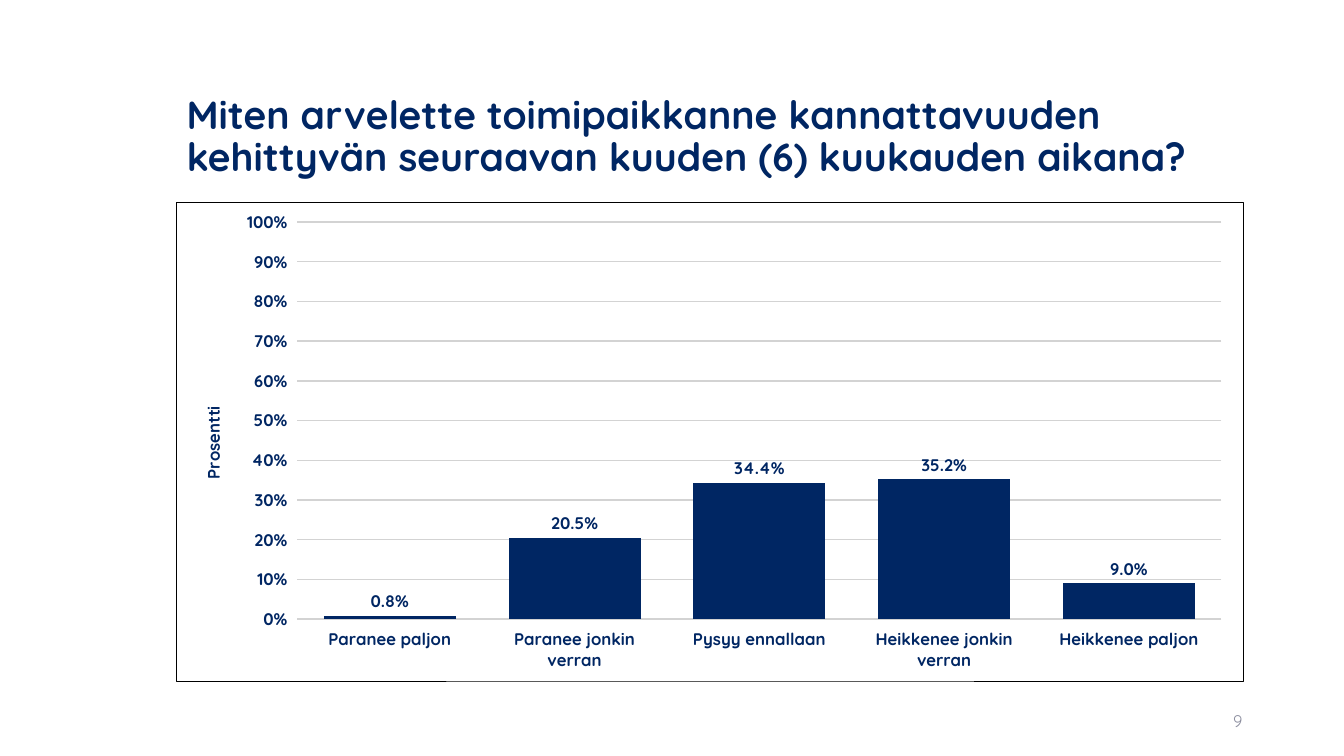
from dataclasses import dataclass

from lxml.etree import SubElement
from pptx import Presentation
from pptx.chart.data import CategoryChartData
from pptx.dml.color import RGBColor
from pptx.enum.chart import XL_CHART_TYPE as ChartType
from pptx.enum.chart import XL_LABEL_POSITION as LabelPos
from pptx.enum.chart import XL_TICK_MARK as TickMark
from pptx.enum.text import MSO_ANCHOR as Anchor
from pptx.enum.text import PP_ALIGN as Align
from pptx.oxml import parse_xml
from pptx.oxml.ns import nsdecls, qn
from pptx.util import Inches, Pt

COLORS = {
    "navy": "002663",
    "grid": "D3D3D3",
    "number": "8C8E9F",
    "border": "000000",
    "white": "FFFFFF",
}
FONT = "Quicksand"


@dataclass
class Answer:
    label: str
    share: float


@dataclass
class Box:
    left: float
    top: float
    width: float
    height: float

    def emu(self) -> tuple:
        return tuple(Inches(v) for v in (self.left, self.top, self.width, self.height))


ANSWERS = [
    Answer("Paranee paljon", 0.008),
    Answer("Paranee jonkin verran", 0.205),
    Answer("Pysyy ennallaan", 0.344),
    Answer("Heikkenee jonkin verran", 0.352),
    Answer("Heikkenee paljon", 0.09),
]
TITLE_BOX = Box(1.75, 0.64, 10.59, 1.45)
CHART_BOX = Box(1.75, 2, 10.59, 4.76)
NUMBER_BOX = Box(9.42, 6.95, 3, 0.4)


def rgb(name: str) -> RGBColor:
    return RGBColor.from_string(COLORS[name])


def style_font(font, size: float, color: str, bold: bool = False) -> None:
    font.name = FONT
    font.size = Pt(size)
    font.bold = bold
    font.color.rgb = rgb(color)


def set_layout(parent, index: int, **values) -> None:
    """Place a chart part by hand, in fractions of the chart's size."""
    for old in parent.findall(qn("c:layout")):
        parent.remove(old)
    layout = parse_xml(f'<c:layout {nsdecls("c")}><c:manualLayout/></c:layout>')
    for tag, value in values.items():
        SubElement(layout[0], qn(f"c:{tag}")).set("val", str(value))
    parent.insert(index, layout)


def add_title(slide) -> None:
    title = slide.shapes.title
    title.left, title.top, title.width, title.height = TITLE_BOX.emu()
    tf = title.text_frame
    tf.text = ("Miten arvelette toimipaikkanne kannattavuuden "
               "kehittyvän seuraavan kuuden (6) kuukauden aikana?")
    tf.word_wrap = True
    tf.vertical_anchor = Anchor.MIDDLE
    p = tf.paragraphs[0]
    p.alignment = Align.LEFT
    p.line_spacing = 0.9
    style_font(p.runs[0].font, 28, "navy", True)


def add_slide_number(slide) -> None:
    tf = slide.shapes.add_textbox(*NUMBER_BOX.emu()).text_frame
    tf.text = "9"
    tf.word_wrap = True
    tf.vertical_anchor = Anchor.MIDDLE
    p = tf.paragraphs[0]
    p.alignment = Align.RIGHT
    style_font(p.runs[0].font, 12, "number")


def add_border(chart) -> None:
    sp_pr = parse_xml(
        f'<c:spPr {nsdecls("c", "a")}><a:noFill/><a:ln w="{Pt(0.5)}"><a:solidFill>'
        f'<a:srgbClr val="{COLORS["border"]}"/></a:solidFill></a:ln></c:spPr>')
    chart.element.find(qn("c:chart")).addnext(sp_pr)


def style_axes(chart) -> None:
    for axis in (chart.category_axis, chart.value_axis):
        axis.format.line.fill.background()
        axis.major_tick_mark = TickMark.OUTSIDE
        axis.minor_tick_mark = TickMark.NONE
    axis = chart.value_axis
    axis.minimum_scale, axis.maximum_scale, axis.major_unit = 0, 1, 0.1
    axis.tick_labels.number_format = "0%"
    axis.tick_labels.number_format_is_linked = False
    axis.has_major_gridlines = True
    grid = axis.major_gridlines.format.line
    grid.color.rgb = rgb("grid")
    grid.width = Pt(1)
    tf = axis.axis_title.text_frame
    tf.text = "Prosentti"
    style_font(tf.paragraphs[0].runs[0].font, 12, "navy", True)
    set_layout(axis.axis_title._element, 1,
               xMode="edge", yMode="edge", x=0.02, y=0.42)


def style_columns(plot) -> None:
    plot.gap_width = 40
    plot.overlap = -2
    plot.vary_by_categories = False
    fill = plot.series[0].format.fill
    fill.solid()
    fill.fore_color.rgb = rgb("navy")
    plot.has_data_labels = True
    labels = plot.data_labels
    labels.show_value = True
    labels.number_format = "0.0%"
    labels.number_format_is_linked = False
    labels.position = LabelPos.OUTSIDE_END
    style_font(labels.font, 12, "navy", True)


def add_answer_chart(slide) -> None:
    data = CategoryChartData(number_format="0.0%")
    data.categories = [a.label for a in ANSWERS]
    data.add_series("Series 1", [a.share for a in ANSWERS])
    chart = slide.shapes.add_chart(
        ChartType.COLUMN_CLUSTERED, *CHART_BOX.emu(), data).chart
    chart.has_title = False
    chart.has_legend = False
    style_font(chart.font, 12, "navy", True)
    style_axes(chart)
    style_columns(chart.plots[0])
    add_border(chart)
    plot_area = chart.element.find(qn("c:chart")).find(qn("c:plotArea"))
    plot_area.append(parse_xml(
        f'<c:spPr {nsdecls("c", "a")}><a:solidFill>'
        f'<a:srgbClr val="{COLORS["white"]}"/></a:solidFill></c:spPr>'))
    set_layout(plot_area, 0, layoutTarget="inner", xMode="edge", yMode="edge",
               x=0.113, y=0.042, w=0.866, h=0.829)


def main() -> None:
    prs = Presentation()
    prs.slide_width, prs.slide_height = Inches(13.33), Inches(7.5)
    slide = prs.slides.add_slide(prs.slide_layouts[5])
    add_title(slide)
    add_slide_number(slide)
    add_answer_chart(slide)
    prs.save("out.pptx")


if __name__ == "__main__":
    main()
